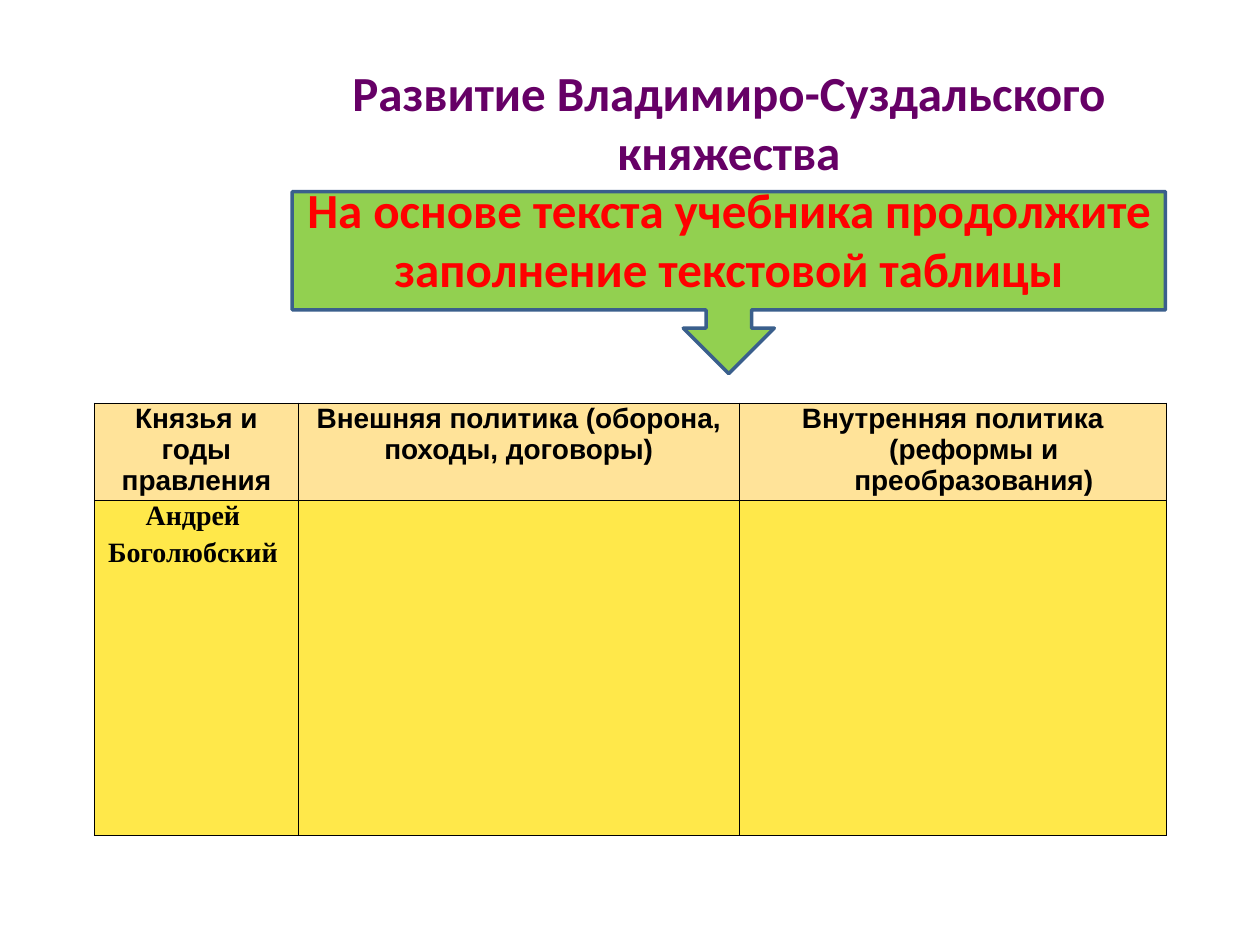
from lxml import etree
from pptx import Presentation
from pptx.dml.color import RGBColor
from pptx.enum.shapes import MSO_SHAPE
from pptx.enum.text import MSO_ANCHOR, MSO_AUTO_SIZE, PP_ALIGN
from pptx.oxml.ns import qn
from pptx.util import Pt

CALLOUT = MSO_SHAPE.DOWN_ARROW_CALLOUT
CENTER = PP_ALIGN.CENTER
TOP = MSO_ANCHOR.TOP
NO_AUTOFIT = MSO_AUTO_SIZE.NONE

BLACK = RGBColor(0x00, 0x00, 0x00)
PURPLE = RGBColor(0x66, 0x00, 0x66)
RED = RGBColor(0xFF, 0x00, 0x00)
GREEN = RGBColor(0x92, 0xD0, 0x50)
BLUE = RGBColor(0x3A, 0x5F, 0x8C)
HEADER_FILL = RGBColor(0xFF, 0xE3, 0x99)
BODY_FILL = RGBColor(0xFF, 0xE8, 0x4A)

HEADING = [
    ("Развитие Владимиро-Суздальского княжества", PURPLE),
    ("На основе текста учебника продолжите заполнение текстовой таблицы", RED),
]
HEADERS = [
    ["Князья и годы", "правления"],
    ["Внешняя политика (оборона, походы, договоры)"],
    ["Внутренняя политика (реформы и преобразования)"],
]
PRINCE = ["Андрей ", "Боголюбский "]
COLUMN_WIDTHS = [116.5, 252, 244]
ROW_HEIGHTS = [55.5, 191.5]


def write_paragraph(paragraph, text, font_name, size, color):
    paragraph.alignment = CENTER
    run = paragraph.add_run()
    run.text = text
    run.font.name = font_name
    run.font.size = Pt(size)
    run.font.bold = True
    run.font.color.rgb = color


def next_paragraph(text_frame, index):
    return text_frame.add_paragraph() if index else text_frame.paragraphs[0]


def add_task_callout(slide, left, top, width, height):
    callout = slide.shapes.add_shape(CALLOUT, Pt(left), Pt(top), Pt(width), Pt(height))
    callout.shadow.inherit = False
    callout.fill.solid()
    callout.fill.fore_color.rgb = GREEN
    callout.line.color.rgb = BLUE
    callout.line.width = Pt(2)


def place_heading(slide, left, top, width, height):
    """Fill the title placeholder and bring it in front of the callout."""
    title = slide.shapes.title
    title.left, title.top, title.width, title.height = Pt(left), Pt(top), Pt(width), Pt(height)
    text_frame = title.text_frame
    text_frame.word_wrap = True
    text_frame.auto_size = NO_AUTOFIT
    text_frame.vertical_anchor = TOP
    for index, (text, color) in enumerate(HEADING):
        write_paragraph(next_paragraph(text_frame, index), text, "Calibri", 28, color)
    title.element.getparent().append(title.element)


def set_borders(cell):
    """Draw all four sides; the lines must precede the fill in the cell properties."""
    properties = cell._tc.get_or_add_tcPr()
    for index, side in enumerate(("lnL", "lnR", "lnT", "lnB")):
        line = etree.Element(qn(f"a:{side}"), w=str(Pt(1)))
        fill = etree.SubElement(line, qn("a:solidFill"))
        etree.SubElement(fill, qn("a:srgbClr"), val=str(BLACK))
        properties.insert(index, line)


def format_cell(cell, color):
    cell.fill.solid()
    cell.fill.fore_color.rgb = color
    cell.margin_left = cell.margin_right = Pt(4.5)
    cell.margin_top = cell.margin_bottom = 0
    set_borders(cell)


def write_cell(cell, lines, font_name, space_before=0):
    for index, text in enumerate(lines):
        paragraph = next_paragraph(cell.text_frame, index)
        if index:
            paragraph.space_before = Pt(space_before)
        write_paragraph(paragraph, text, font_name, 16, BLACK)


def add_policy_table(slide, left, top):
    frame = slide.shapes.add_table(
        len(ROW_HEIGHTS), len(COLUMN_WIDTHS), Pt(left), Pt(top),
        Pt(sum(COLUMN_WIDTHS)), Pt(sum(ROW_HEIGHTS)))
    table = frame.table
    table.horz_banding = False
    for column, width in zip(table.columns, COLUMN_WIDTHS):
        column.width = Pt(width)
    for row, height, color in zip(table.rows, ROW_HEIGHTS, (HEADER_FILL, BODY_FILL)):
        row.height = Pt(height)
        for cell in row.cells:
            format_cell(cell, color)
    for index, lines in enumerate(HEADERS):
        write_cell(table.cell(0, index), lines, "Arial")
    write_cell(table.cell(1, 0), PRINCE, "Times New Roman", space_before=3.2)

    hanging = table.cell(0, 2).text_frame.paragraphs[0]._p.get_or_add_pPr()
    hanging.set("marL", str(Pt(24)))
    hanging.set("indent", str(-Pt(24)))


def main():
    presentation = Presentation()
    presentation.slide_width, presentation.slide_height = Pt(720), Pt(540)
    slide = presentation.slides.add_slide(presentation.slide_layouts[5])
    add_task_callout(slide, 167, 109.5, 499, 104)
    add_policy_table(slide, 54, 230.5)
    place_heading(slide, 167, 32, 499, 143)
    presentation.save("out.pptx")


if __name__ == "__main__":
    main()
